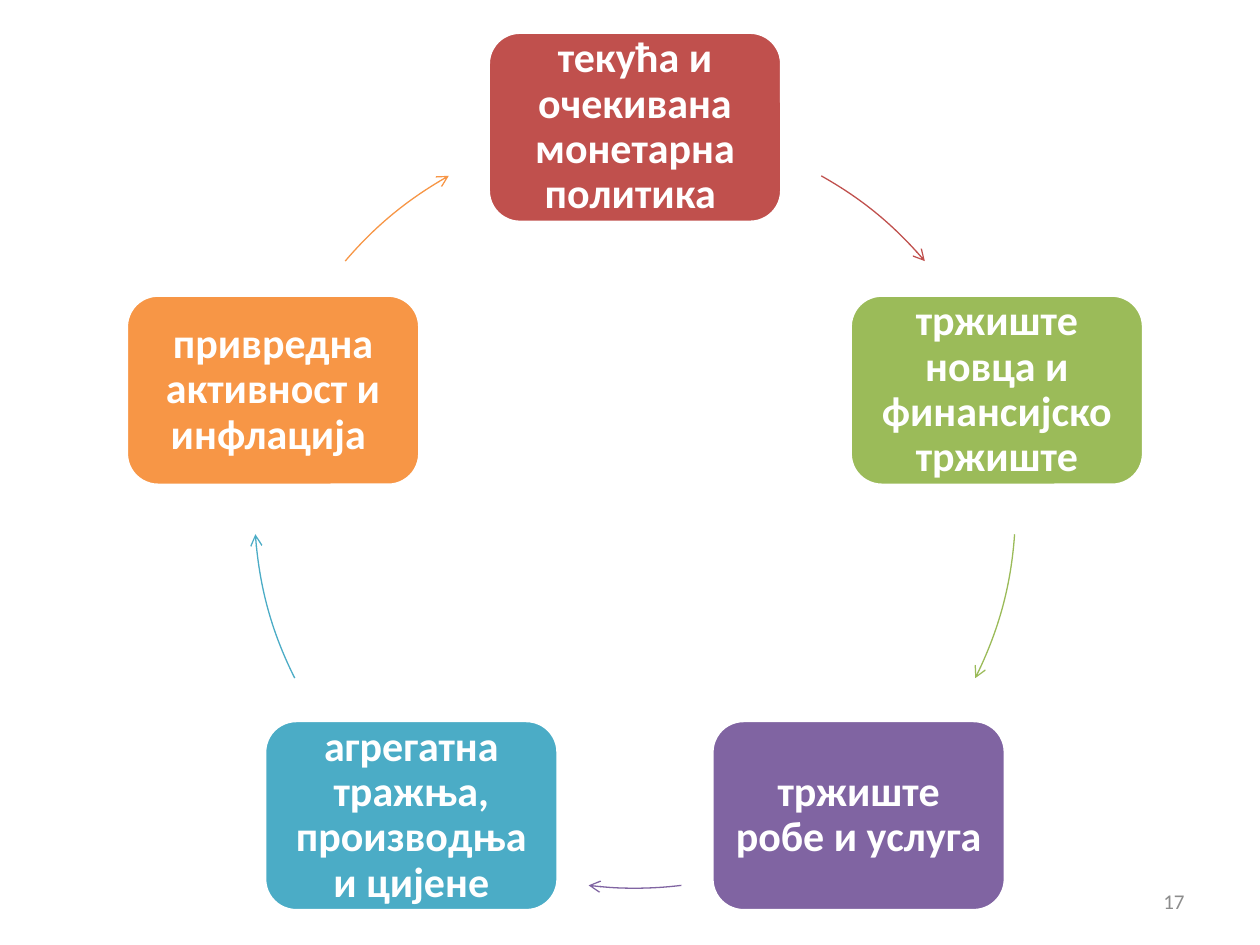
from math import cos, radians, sin

from lxml import etree
from pptx import Presentation
from pptx.dml.color import RGBColor
from pptx.enum.shapes import MSO_SHAPE
from pptx.enum.text import MSO_ANCHOR, PP_ALIGN
from pptx.oxml.ns import qn
from pptx.util import Inches, Pt

ROUND = MSO_SHAPE.ROUNDED_RECTANGLE
ARC = MSO_SHAPE.ARC
MIDDLE = MSO_ANCHOR.MIDDLE
CENTER = PP_ALIGN.CENTER
RIGHT = PP_ALIGN.RIGHT

FONT = "Calibri"
WHITE = "FFFFFF"
GREY = "8C8C8C"

# Cycle: centre, radius and box size in inches
MID_X, MID_Y, RADIUS = 5.04, 4.03, 3.02
BOX_W, BOX_H = 2.33, 1.51

# Text, colour, start and end angle of the arrow that follows (clockwise)
STEPS = [
    ("текућа и очекивана монетарна политика ", "C0504D", 299.3, 319.6),
    ("тржиште новца и финансијско тржиште", "9BBB59", 4, 26.6),
    ("тржиште робе и услуга ", "8064A2", 83, 97),
    ("агрегатна тражња, производња и цијене", "4BACC6", 153.4, 176),
    ("привредна активност и инфлација ", "F79646", 220.4, 240.7),
]


def color(code):
    return RGBColor.from_string(code)


def write(shape, text, size, code, align, bold=False):
    frame = shape.text_frame
    frame.word_wrap = True
    frame.vertical_anchor = MIDDLE
    para = frame.paragraphs[0]
    para.text = text
    para.alignment = align
    font = para.font
    font.name, font.size, font.bold = FONT, Pt(size), bold
    font.color.rgb = color(code)
    return frame


def add_box(slide, text, code, angle):
    left = MID_X + RADIUS * cos(radians(angle)) - BOX_W / 2
    top = MID_Y + RADIUS * sin(radians(angle)) - BOX_H / 2
    box = slide.shapes.add_shape(
        ROUND, Inches(left), Inches(top), Inches(BOX_W), Inches(BOX_H))
    box.shadow.inherit = False
    box.fill.solid()
    box.fill.fore_color.rgb = color(code)
    box.line.color.rgb = color(WHITE)
    box.line.width = Pt(2)
    frame = write(box, text, 24, WHITE, CENTER, bold=True)
    frame.margin_left = frame.margin_right = Inches(0.1)
    frame.margin_top = frame.margin_bottom = Inches(0.1)
    frame.paragraphs[0].line_spacing = 0.9


def add_arc(slide, code, start, end):
    arc = slide.shapes.add_shape(
        ARC, Inches(MID_X - RADIUS), Inches(MID_Y - RADIUS),
        Inches(2 * RADIUS), Inches(2 * RADIUS))
    # Angles are stored as 60000ths of a degree, adjustments as 100000ths
    arc.adjustments[0] = start * 0.6
    arc.adjustments[1] = end * 0.6
    arc.shadow.inherit = False
    arc.fill.background()
    arc.line.color.rgb = color(code)
    arc.line.width = Pt(0.75)
    line = arc.line.fill and arc.element.spPr.find(qn("a:ln"))
    etree.SubElement(line, qn("a:tailEnd"), type="arrow")


def add_number(slide, text):
    box = slide.shapes.add_textbox(
        Inches(7.17), Inches(6.95), Inches(2.33), Inches(0.4))
    write(box, text, 12, GREY, RIGHT)


def main():
    deck = Presentation()
    deck.slide_width, deck.slide_height = Inches(10), Inches(7.5)
    slide = deck.slides.add_slide(deck.slide_layouts[6])

    # Boxes start at the top, evenly spaced, each with its arrow
    for i, (text, code, start, end) in enumerate(STEPS):
        add_box(slide, text, code, i * 360 / len(STEPS) - 90)
        add_arc(slide, code, start, end)

    # Page number
    add_number(slide, "17")
    deck.save("out.pptx")


if __name__ == "__main__":
    main()
